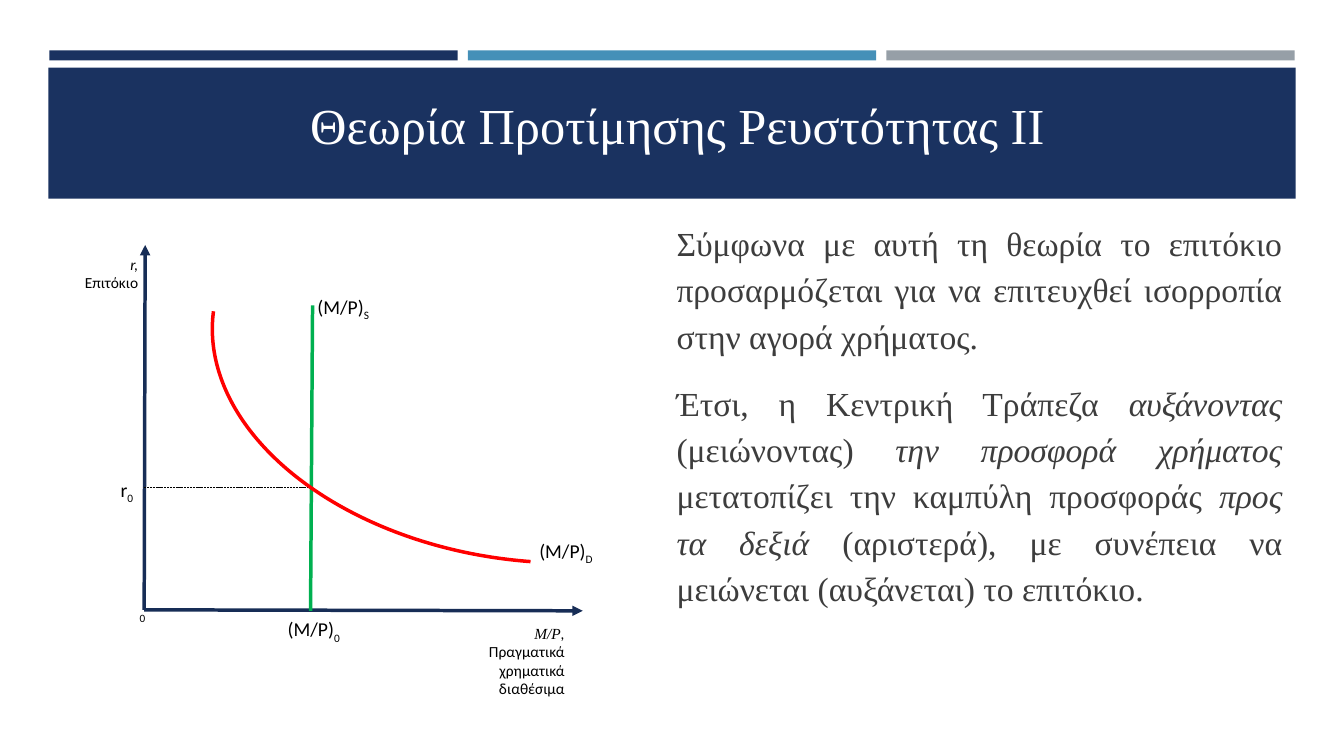
from pptx import Presentation
from pptx.dml.color import RGBColor
from pptx.enum.dml import MSO_LINE_DASH_STYLE as Dash
from pptx.enum.shapes import MSO_CONNECTOR as Connector, MSO_SHAPE as Shape
from pptx.enum.text import MSO_ANCHOR as Anchor, MSO_AUTO_SIZE as AutoSize, PP_ALIGN as Align
from pptx.oxml.ns import qn
from pptx.util import Inches, Pt
from lxml.etree import SubElement

NAVY = RGBColor(0x1A, 0x32, 0x60)
AXIS_NAVY = RGBColor(0x17, 0x2D, 0x56)
BLUE = RGBColor(0x45, 0x90, 0xB8)
GREY = RGBColor(0x96, 0x9F, 0xA7)
GREEN = RGBColor(0x00, 0xB0, 0x50)
RED = RGBColor(0xFF, 0x00, 0x00)
BLACK = RGBColor(0x00, 0x00, 0x00)
WHITE = RGBColor(0xFF, 0xFF, 0xFF)
TEXT_GREY = RGBColor(0x3D, 0x3D, 0x3D)
SERIF, SANS = "Times New Roman", "Calibri"

WIDTH, HEIGHT = 13.33, 7.5
MARGIN, GAP = 0.49, 0.1
BAR_COLORS = [NAVY, BLUE, GREY]
BAR_WIDTH = (WIDTH - 2 * MARGIN - 2 * GAP) / len(BAR_COLORS)

TITLE = "Θεωρία Προτίμησης Ρευστότητας ΙΙ"
BODY = [
    [("Σύμφωνα με αυτή τη θεωρία το επιτόκιο προσαρμόζεται για να επιτευχθεί "
      "ισορροπία στην αγορά χρήματος.", {})],
    [("Έτσι, η Κεντρική Τράπεζα ", {}),
     ("αυξάνοντας", {"italic": True}),
     (" (μειώνοντας) ", {}),
     ("την προσφορά χρήματος ", {"italic": True}),
     ("μετατοπίζει την καμπύλη προσφοράς ", {}),
     ("προς τα δεξιά ", {"italic": True}),
     ("(αριστερά), με συνέπεια να μειώνεται (αυξάνεται) το επιτόκιο.", {})],
]

ORIGIN_X, ORIGIN_Y = 1.43, 6.05
SUPPLY_X, RATE_Y = 3.08, 4.84
LINES = [
    ((1.44, 2.43), (ORIGIN_X, ORIGIN_Y), AXIS_NAVY, 2.5, "arrow"),
    ((5.78, 6.06), (ORIGIN_X, ORIGIN_Y), AXIS_NAVY, 2.5, "arrow"),
    ((3.1, 3.03), (SUPPLY_X, 6.06), GREEN, 2.5, "plain"),
    ((ORIGIN_X, RATE_Y), (SUPPLY_X, RATE_Y), BLACK, 0.5, "dashed"),
]
DEMAND_BOX = (2.09, 1.44, 6.32, 4.12)

LABELS = [
    ((0.69, 2.48, 0.78, 0.47), Align.RIGHT, 11,
     [[("r,", {"italic": True})], [("Επιτόκιο", {})]]),
    ((1.21, 6.02, 0.33, 0.24), Align.RIGHT, 8, [[("0", {})]]),
    ((2.72, 6.07, 0.75, 0.34), Align.RIGHT, 14,
     [[("(M/P)", {}), ("0", {"baseline": -30})]]),
    ((3.05, 2.88, 0.75, 0.34), Align.LEFT, 14,
     [[("(M/P)", {}), ("S", {"baseline": -25})]]),
    ((5.25, 5.3, 0.82, 0.34), Align.LEFT, 14,
     [[("(M/P)", {}), ("D", {"baseline": -25})]]),
    ((1.06, 4.69, 0.36, 0.34), Align.RIGHT, 14,
     [[("r", {}), ("0", {"baseline": -25})]]),
    ((4.67, 6.14, 1.03, 0.84), Align.RIGHT, 11,
     [[("M/P", {"italic": True, "font": SERIF}), (",", {"italic": True})],
      [("Πραγματικά χρηματικά διαθέσιμα", {})]]),
]


def place(shape, box):
    shape.left, shape.top, shape.width, shape.height = map(Inches, box)


def write(frame, paragraphs, font, size, color, alignment):
    for index, runs in enumerate(paragraphs):
        paragraph = frame.add_paragraph() if index else frame.paragraphs[0]
        paragraph.alignment = alignment
        for text, style in runs:
            run = paragraph.add_run()
            run.text = text
            run.font.name = style.get("font", font)
            run.font.size = Pt(size)
            run.font.color.rgb = color
            run.font.italic = style.get("italic", False)
            if "baseline" in style:
                run.font._element.set("baseline", str(style["baseline"] * 1000))


def add_band(slide, box, color):
    band = slide.shapes.add_shape(Shape.RECTANGLE, *map(Inches, box))
    band.shadow.inherit = False
    band.fill.solid()
    band.fill.fore_color.rgb = color
    band.line.fill.background()


def add_line(slide, start, end, color, weight, kind):
    line = slide.shapes.add_connector(Connector.STRAIGHT, *map(Inches, start + end))
    line.line.color.rgb = color
    line.line.width = Pt(weight)
    if kind == "dashed":
        line.line.dash_style = Dash.SQUARE_DOT
    if kind == "arrow":
        SubElement(line.line._get_or_add_ln(), qn("a:headEnd"), type="triangle")
    SubElement(line._element.spPr, qn("a:effectLst"))


def add_demand_curve(slide):
    curve = slide.shapes.add_shape(Shape.ARC, *map(Inches, DEMAND_BOX))
    curve.adjustments[0] = 157.309
    curve.adjustments[1] = 0
    curve.rotation = 187.5
    curve.shadow.inherit = False
    curve.fill.background()
    curve.line.color.rgb = RED
    curve.line.width = Pt(2.5)


def add_label(slide, box, alignment, size, paragraphs):
    frame = slide.shapes.add_textbox(*map(Inches, box)).text_frame
    frame.word_wrap = True
    frame.auto_size = AutoSize.SHAPE_TO_FIT_TEXT
    write(frame, paragraphs, SANS, size, BLACK, alignment)


def fill_title(title):
    place(title, (0.69, 0.82, 12.06, 0.94))
    frame = title.text_frame
    frame.auto_size = AutoSize.NONE
    frame.vertical_anchor = Anchor.TOP
    frame.margin_top = Inches(0.11)
    write(frame, [[(TITLE, {})]], SERIF, 36, WHITE, Align.CENTER)


def fill_body(body):
    place(body, (6.61, 2.1, 6.21, 4.41))
    frame = body.text_frame
    frame.auto_size = AutoSize.NONE
    frame.vertical_anchor = Anchor.TOP
    write(frame, BODY, SERIF, 24, TEXT_GREY, Align.JUSTIFY)
    for paragraph in frame.paragraphs:
        paragraph.line_spacing = 1.15
        paragraph.space_before = Pt(4.8)
        paragraph.space_after = Pt(10)
        properties = paragraph._p.get_or_add_pPr()
        properties.set("marL", "0")
        properties.set("indent", "0")
        SubElement(properties, qn("a:buNone"))


def main():
    presentation = Presentation()
    presentation.slide_width = Inches(WIDTH)
    presentation.slide_height = Inches(HEIGHT)
    slide = presentation.slides.add_slide(presentation.slide_layouts[1])
    title, body = slide.placeholders
    fill_title(title)
    fill_body(body)

    for column, color in enumerate(BAR_COLORS):
        left = MARGIN + column * (BAR_WIDTH + GAP)
        add_band(slide, (left, 0.5, BAR_WIDTH, 0.1), color)
    add_band(slide, (0.48, 0.67, 12.37, 1.3), NAVY)
    for placeholder in (body, title):
        slide.shapes._spTree.append(placeholder._element)

    for line in LINES:
        add_line(slide, *line)
    add_demand_curve(slide)
    for label in LABELS:
        add_label(slide, *label)
    presentation.save("out.pptx")


if __name__ == "__main__":
    main()
